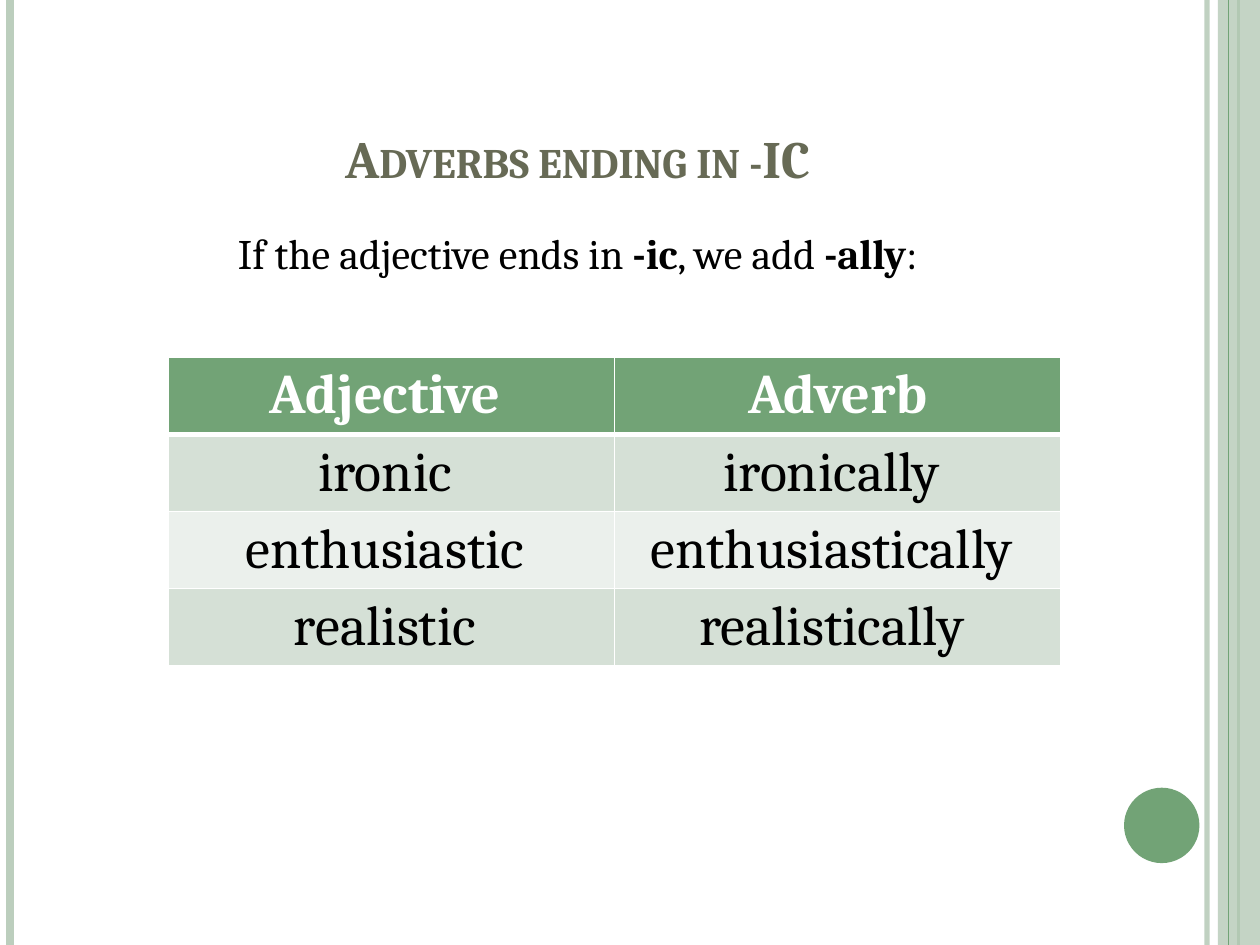
import pptx
import pptx.dml.color
import pptx.enum.shapes
import pptx.enum.text
import pptx.oxml.ns
import pptx.util
from lxml import etree

Cm = pptx.util.Cm
Pt = pptx.util.Pt
qn = pptx.oxml.ns.qn
CENTER = pptx.enum.text.PP_ALIGN.CENTER
ANCHOR = pptx.enum.text.MSO_ANCHOR
SHAPE = pptx.enum.shapes.MSO_SHAPE

FONT = "Cambria"
SLIDE_W, SLIDE_H = 25.4, 19.05
COLORS = {
    "green": "72A376",
    "pale_green": "BCCEBD",
    "olive": "676A55",
    "odd_row": "D5E0D6",
    "even_row": "EBF0EC",
    "white": "FFFFFF",
    "black": "000000",
}
ADVERBS = [
    ("Adjective ", "Adverb"),
    ("ironic ", "ironically "),
    ("enthusiastic ", "enthusiastically "),
    ("realistic ", "realistically "),
]


def rgb(name):
    return pptx.dml.color.RGBColor.from_string(COLORS[name])


def set_opacity(element, percent):
    color = next(element.iter(qn("a:srgbClr")))
    etree.SubElement(color, qn("a:alpha"), val=str(percent * 1000))


def style_paragraph(paragraph, size, color, bold=None):
    paragraph.alignment = CENTER
    font = paragraph.font
    font.name, font.size, font.bold = FONT, Pt(size), bold
    font.color.rgb = rgb(color)


def add_stripe(slide, x, width, color, opacity=100):
    stripe = slide.shapes.add_connector(
        pptx.enum.shapes.MSO_CONNECTOR.STRAIGHT, Cm(x), 0, Cm(x), Cm(SLIDE_H))
    stripe.line.width = Pt(width)
    stripe.line.color.rgb = rgb(color)
    properties = stripe.line._get_or_add_ln().getparent()
    if opacity < 100:
        set_opacity(properties, opacity)
    etree.SubElement(properties, qn("a:effectLst"))


def add_filled_shape(slide, kind, x, y, width, height, color, opacity=100):
    shape = slide.shapes.add_shape(kind, Cm(x), Cm(y), Cm(width), Cm(height))
    shape.shadow.inherit = False
    shape.fill.solid()
    shape.fill.fore_color.rgb = rgb(color)
    if opacity < 100:
        set_opacity(shape.fill._xPr, opacity)
    shape.line.fill.background()


def place_text(placeholder, x, y, width, height, anchor):
    placeholder.left, placeholder.top = Cm(x), Cm(y)
    placeholder.width, placeholder.height = Cm(width), Cm(height)
    frame = placeholder.text_frame
    frame.word_wrap = True
    frame.auto_size = pptx.enum.text.MSO_AUTO_SIZE.NONE
    frame.vertical_anchor = anchor
    return frame.paragraphs[0]


def fill_title(slide):
    heading = place_text(slide.shapes.title, 1.27, 0.76, 20.75, 3.18, ANCHOR.BOTTOM)
    run = heading.add_run()
    run.text = "Adverbs ending in -IC"
    style_paragraph(heading, 30, "olive", True)
    run.font._element.set("cap", "small")


def fill_rule(slide):
    rule = place_text(slide.placeholders[1], 1.27, 4.45, 20.75, 13.54, ANCHOR.TOP)
    style_paragraph(rule, 24, "black")
    rule.space_before = Pt(6)
    properties = rule._p.get_or_add_pPr()
    properties.set("marL", str(Cm(0.76)))
    properties.set("indent", str(Cm(-0.76)))
    # The bullet setting comes before the default run properties
    properties.find(qn("a:defRPr")).addprevious(etree.Element(qn("a:buNone")))
    for index, part in enumerate(
            ["If the adjective ends in ", "-ic", ", we add ", "-ally", ":"]):
        run = rule.add_run()
        run.text = part
        run.font.bold = index % 2 == 1


def set_borders(cell, bottom_width):
    properties = cell._tc.get_or_add_tcPr()
    widths = {"lnL": 1, "lnR": 1, "lnT": 1, "lnB": bottom_width}
    for index, (side, width) in enumerate(widths.items()):
        line = etree.Element(qn("a:" + side), w=str(Pt(width)))
        fill = etree.SubElement(line, qn("a:solidFill"))
        etree.SubElement(fill, qn("a:srgbClr"), val=COLORS["white"])
        properties.insert(index, line)


def add_adverb_table(slide):
    row_height = 1.55
    table = slide.shapes.add_table(
        len(ADVERBS), 2, Cm(3.39), Cm(7.2), Cm(18), Cm(row_height * len(ADVERBS))).table
    for row, words in enumerate(ADVERBS):
        header = row == 0
        band = "green" if header else "odd_row" if row % 2 else "even_row"
        for column, word in enumerate(words):
            cell = table.cell(row, column)
            cell.text = word
            cell.vertical_anchor = ANCHOR.TOP if header else ANCHOR.MIDDLE
            cell.fill.solid()
            cell.fill.fore_color.rgb = rgb(band)
            style_paragraph(cell.text_frame.paragraphs[0], 32,
                            "white" if header else "black", header)
            # A thick rule parts the header from the words
            set_borders(cell, 3 if header else 1)
            if row == 1:
                cell._tc.tcPr.find(qn("a:lnT")).set("w", str(Pt(3)))


def main():
    deck = pptx.Presentation()
    deck.slide_width, deck.slide_height = Cm(SLIDE_W), Cm(SLIDE_H)
    slide = deck.slides.add_slide(deck.slide_layouts[1])

    # Side decoration
    add_stripe(slide, 24.33, 3, "pale_green", 93)
    add_stripe(slide, 0.21, 4.5, "pale_green")
    add_stripe(slide, 24.97, 1.5, "green")
    add_filled_shape(slide, SHAPE.RECTANGLE, 24.55, 0, 0.85, SLIDE_H, "pale_green", 87)
    add_stripe(slide, 24.77, 0.75, "green")
    add_filled_shape(slide, SHAPE.OVAL, 22.66, 15.88, 1.52, 1.52, "green")

    # Lesson content
    fill_title(slide)
    fill_rule(slide)
    add_adverb_table(slide)

    deck.save("out.pptx")


if __name__ == "__main__":
    main()
